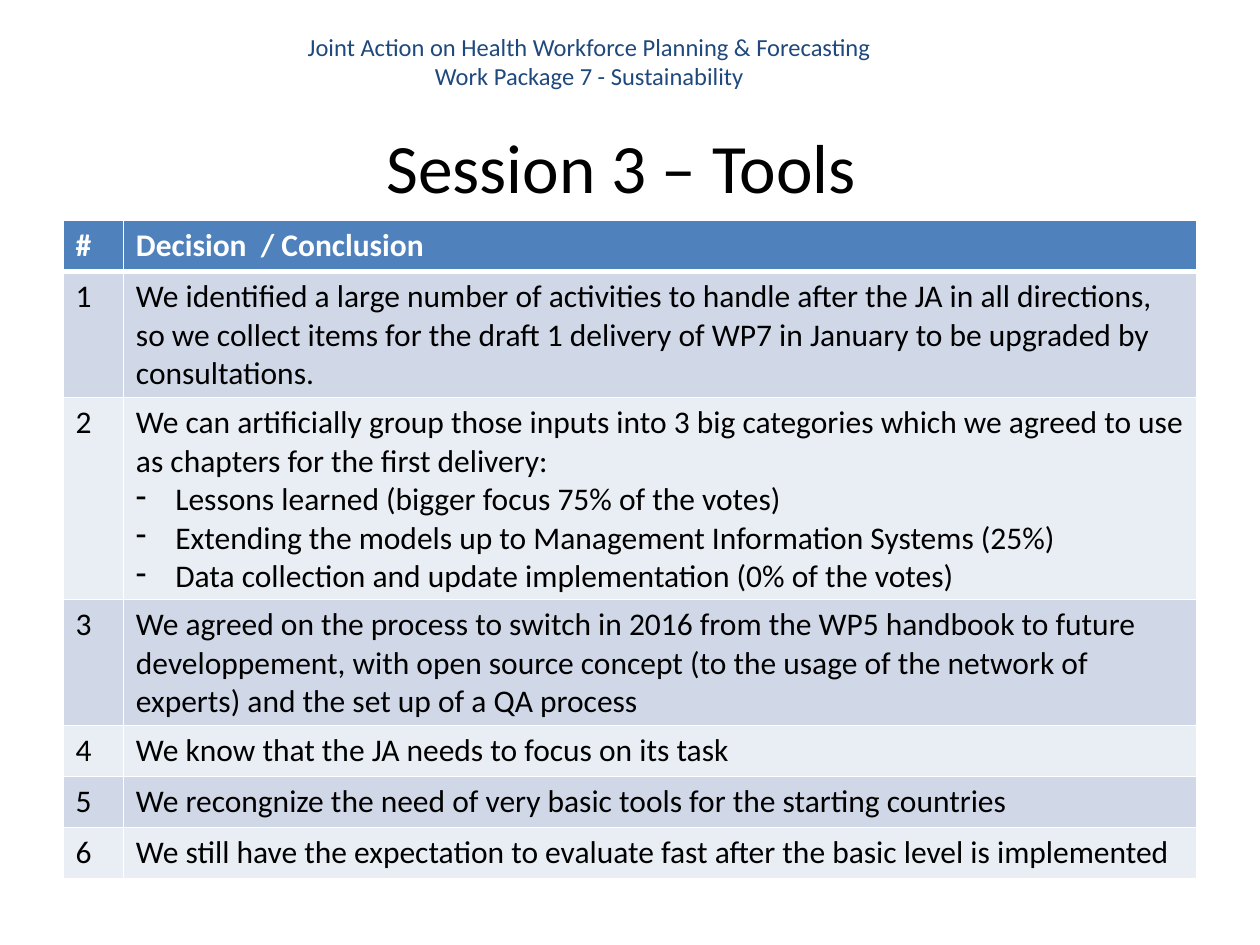
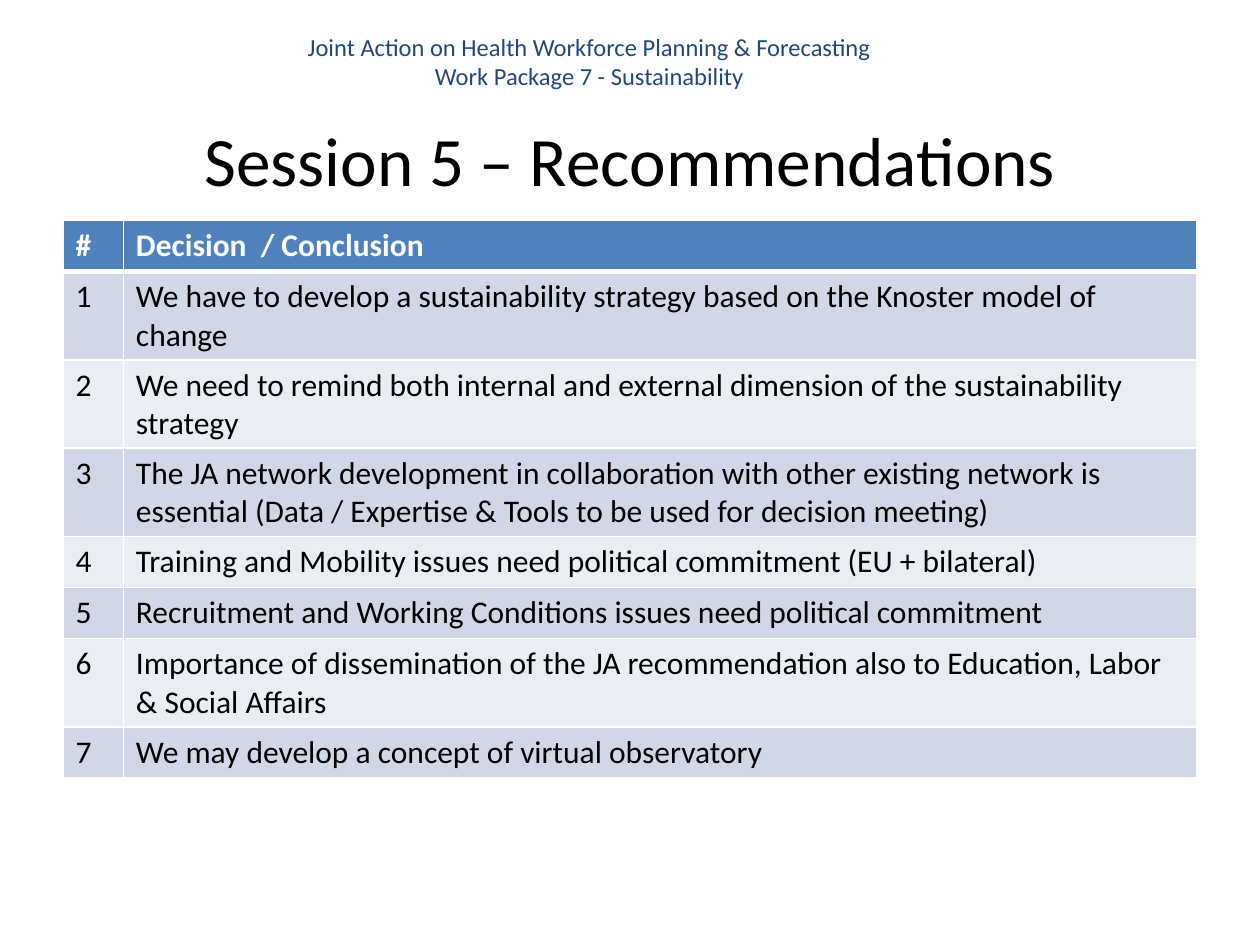
from lxml import etree
from pptx import Presentation
from pptx.dml.color import RGBColor
from pptx.enum import text
from pptx.oxml import ns
from pptx.util import Pt

FONT = "Calibri"
NAVY, BLUE, BLACK, WHITE = "1F497D", "4F81BD", "000000", "FFFFFF"
BANDS = ["D0D8E8", "E9EDF4"]
HEADER = ["Joint Action on Health Workforce Planning & Forecasting",
          "Work Package 7 - Sustainability"]
COLS = [34.5, 613.5]
ROW = 29.2
INDENT = 22.5

# Each item is a text, or a list of a text and its dashed points
TOOLS = [
    "We identified a large number of activities to handle after the JA in all "
    "directions, so we collect items for the draft 1 delivery of WP7 in January "
    "to be upgraded by consultations.",
    ["We can artificially group those inputs into 3 big categories which we "
     "agreed to use as chapters for the first delivery:",
     "Lessons learned (bigger focus 75% of the votes)",
     "Extending the models up to Management Information Systems (25%)",
     "Data collection and update implementation (0% of the votes)"],
    "We agreed on the process to switch in 2016 from the WP5 handbook to future "
    "developpement, with open source concept (to the usage of the network of "
    "experts) and the set up of a QA process",
    "We know that the JA needs to focus on its task",
    "We recongnize the need of very basic tools for the starting countries",
    "We still have the expectation to evaluate fast after the basic level is "
    "implemented",
]
ADVICE = [
    "We have to develop a sustainability strategy based on the Knoster model of "
    "change",
    "We need to remind both internal and external dimension of the "
    "sustainability strategy",
    "The JA network development in collaboration with other existing network is "
    "essential (Data / Expertise & Tools to be used for decision meeting)",
    "Training and Mobility issues need political commitment (EU + bilateral)",
    "Recruitment and Working Conditions issues need political commitment",
    "Importance of dissemination of the JA recommendation also to Education, "
    "Labor & Social Affairs",
    "We may develop a concept of virtual observatory",
]


def rgb(code):
    return RGBColor.from_string(code)


class Deck:
    def __init__(self):
        self.prs = Presentation()
        self.prs.slide_width, self.prs.slide_height = Pt(720), Pt(540)
        self.slide = None

    def style(self, par, size, color, bold=False, align=None):
        font = par.font
        font.name, font.size, font.bold = FONT, Pt(size), bold
        font.color.rgb = rgb(color)
        par.alignment = align

    def page(self, title, left, top):
        self.slide = self.prs.slides.add_slide(self.prs.slide_layouts[5])
        self.header()
        self.title(title, left, top)

    def header(self):
        box = self.slide.shapes.add_textbox(Pt(135.5), Pt(14.5), Pt(402.5), Pt(41))
        frame = box.text_frame
        frame.word_wrap = True
        frame.text = "\n".join(HEADER)
        for par in frame.paragraphs:
            self.style(par, 14, NAVY, align=text.PP_ALIGN.CENTER)

    def title(self, words, left, top):
        box = self.slide.shapes.title
        box.left, box.top, box.width, box.height = Pt(left), Pt(top), Pt(648), Pt(90)
        frame = box.text_frame
        frame.text = words
        frame.auto_size = text.MSO_AUTO_SIZE.NONE
        frame.vertical_anchor = text.MSO_ANCHOR.MIDDLE
        # The title sits in the lower half of its box
        frame.margin_top, frame.margin_bottom = Pt(48), 0
        self.style(frame.paragraphs[0], 39.6, BLACK, align=text.PP_ALIGN.CENTER)

    def dash(self, par):
        props = par._p.get_or_add_pPr()
        props.set("marL", str(Pt(INDENT)))
        props.set("indent", str(-Pt(INDENT)))
        etree.SubElement(props, ns.qn("a:buChar")).set("char", "-")

    def edges(self, cell, top, bottom):
        props = cell._tc.get_or_add_tcPr()
        sides = [("L", 1), ("R", 1), ("T", top), ("B", bottom)]
        for spot, (side, width) in enumerate(sides):
            line = etree.Element(ns.qn(f"a:ln{side}"), w=str(Pt(width)))
            fill = etree.SubElement(line, ns.qn("a:solidFill"))
            etree.SubElement(fill, ns.qn("a:srgbClr")).set("val", WHITE)
            props.insert(spot, line)

    def cell(self, cell, words, row):
        head = row == 0
        lines = [words] if isinstance(words, str) else words
        cell.text = "\n".join(lines)
        for spot, par in enumerate(cell.text_frame.paragraphs):
            if spot:
                self.dash(par)
            self.style(par, 18, WHITE if head else BLACK, bold=head)
        cell.fill.solid()
        cell.fill.fore_color.rgb = rgb(BLUE if head else BANDS[(row - 1) % 2])
        self.edges(cell, 3 if row == 1 else 1, 3 if head else 1)

    def table(self, items):
        rows = [("#", "Decision  / Conclusion")]
        rows += [(str(num), item) for num, item in enumerate(items, 1)]
        grid = self.slide.shapes.add_table(
            len(rows), len(COLS), Pt(36), Pt(126), Pt(sum(COLS)),
            Pt(ROW * len(rows))).table
        for col, width in zip(grid.columns, COLS):
            col.width = Pt(width)
        for row, pair in enumerate(rows):
            grid.rows[row].height = Pt(ROW)
            for col, words in enumerate(pair):
                self.cell(grid.cell(row, col), words, row)


def main():
    deck = Deck()

    # Session 3
    deck.page("Session 3 – Tools", 31, 26)
    deck.table(TOOLS)

    # Session 5
    deck.page("Session 5 – Recommendations", 36, 21.5)
    deck.table(ADVICE)

    deck.prs.save("out.pptx")


if __name__ == "__main__":
    main()
